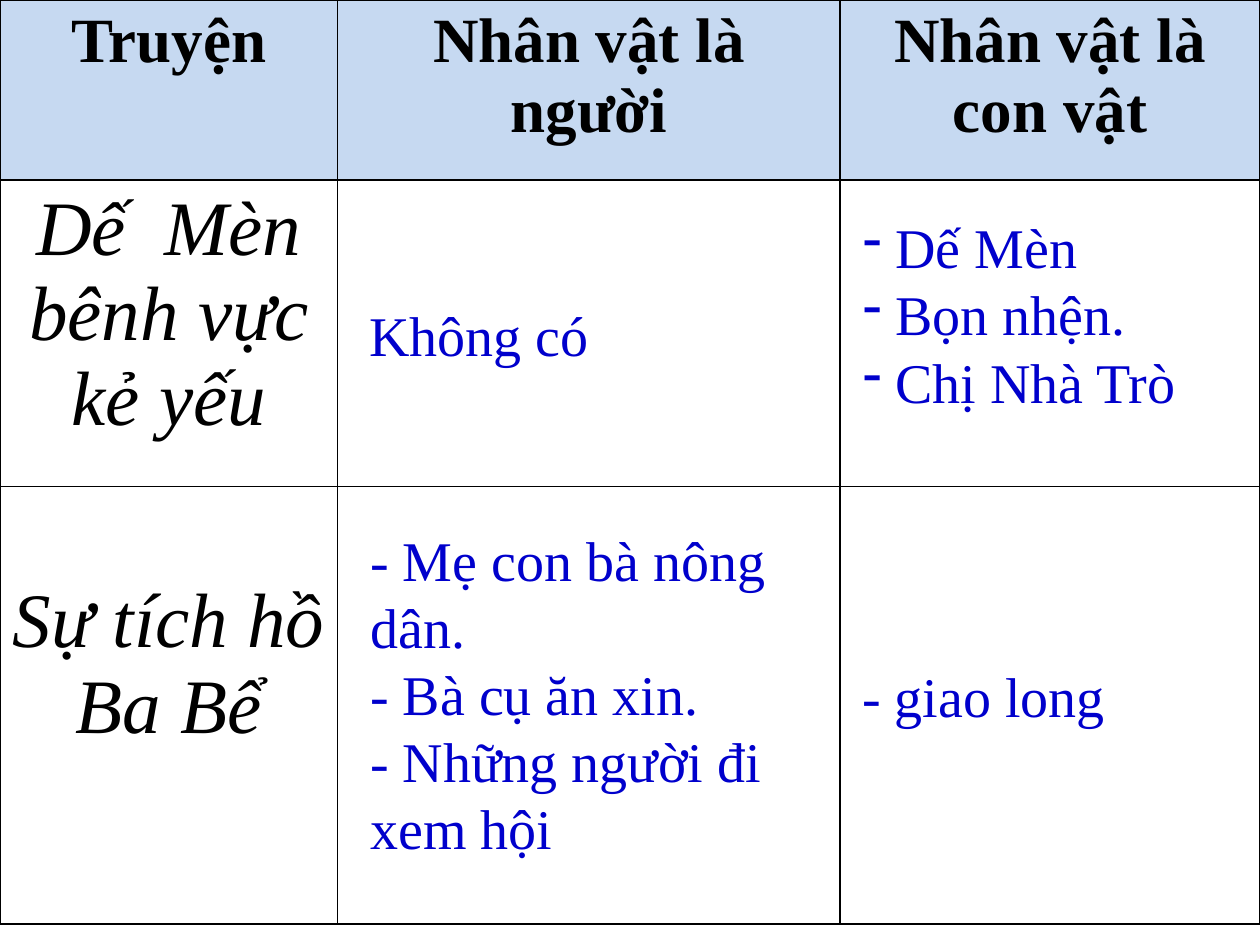
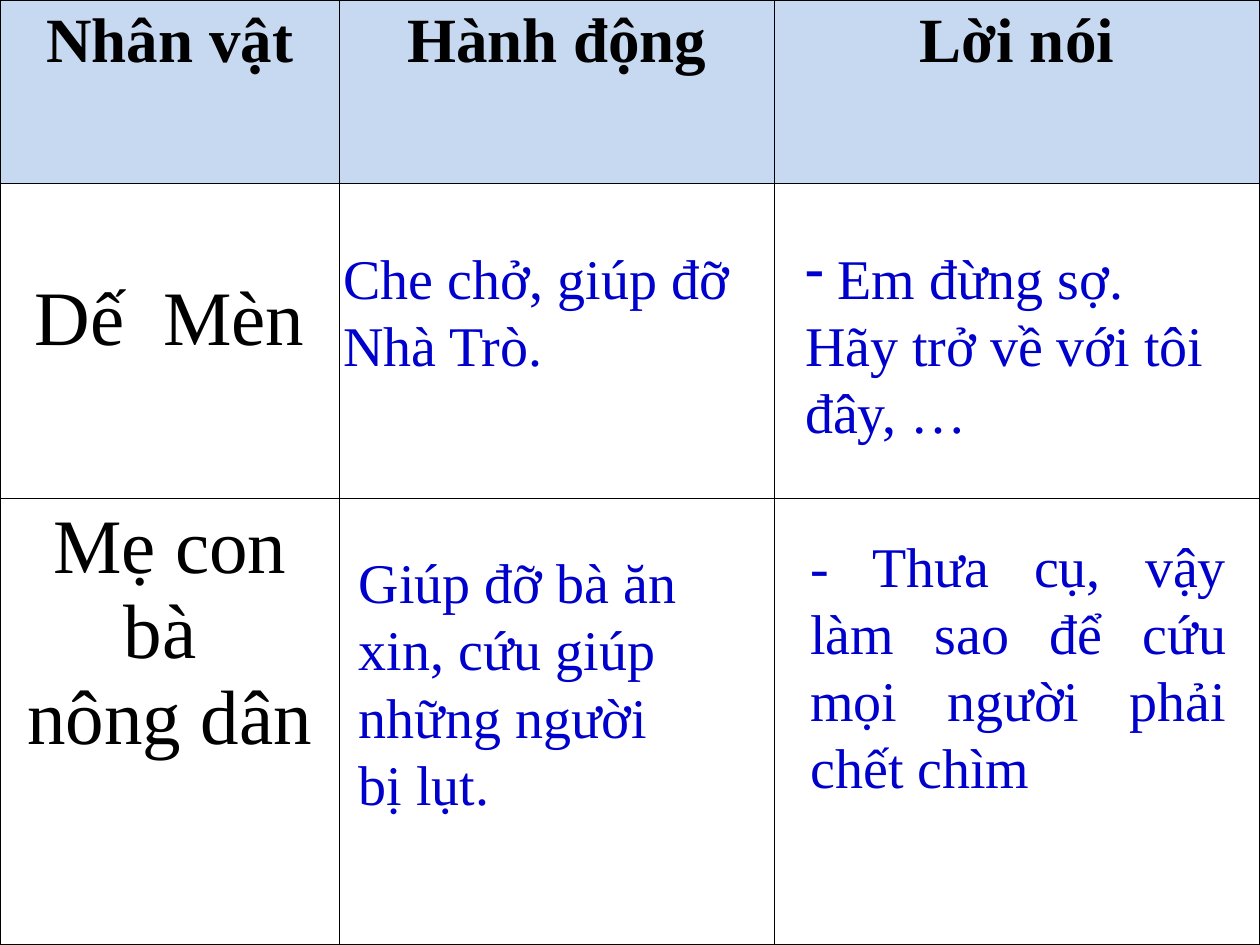
import pptx
import pptx.dml.color
import pptx.enum.text
import pptx.oxml
import pptx.oxml.ns
import pptx.util

Pt = pptx.util.Pt
RGBColor = pptx.dml.color.RGBColor
Align = pptx.enum.text.PP_ALIGN

BLACK = RGBColor(0x00, 0x00, 0x00)
WHITE = RGBColor(0xFF, 0xFF, 0xFF)
HEADER_BLUE = RGBColor(0xC6, 0xD9, 0xF1)
ANSWER_BLUE = RGBColor(0x00, 0x00, 0xCC)
FONT = "Times New Roman"
HEADER_SIZE, NAME_SIZE, ANSWER_SIZE = 36, 44, 32
CELL_TOP = 3.6
LOWERED_TOP = 53
BLANK_LAYOUT = 6


def write_text(frame, lines, size, color, align=None, bold=False, italic=False, dashes=False):
    """Fill a text frame with one paragraph per line."""
    for index, line in enumerate(lines):
        para = frame.paragraphs[0] if index == 0 else frame.add_paragraph()
        para.alignment = align
        if dashes:
            add_dash_bullet(para)
        span = para.add_run()
        span.text = line
        font = span.font
        font.name, font.size, font.color.rgb = FONT, Pt(size), color
        font.bold, font.italic = bold, italic


def add_dash_bullet(para):
    properties = para._p.get_or_add_pPr()
    properties.set("marL", "0")
    properties.set("indent", "0")
    pptx.oxml.ns.qn("a:buChar")
    for markup in ("<a:buFontTx {}/>", '<a:buChar {} char="-"/>'):
        properties.append(pptx.oxml.parse_xml(markup.format(pptx.oxml.ns.nsdecls("a"))))


def add_borders(cell, color=BLACK, width=1):
    properties = cell._tc.get_or_add_tcPr()
    for index, side in enumerate(("lnL", "lnR", "lnT", "lnB")):
        line = pptx.oxml.parse_xml(
            f'<a:{side} {pptx.oxml.ns.nsdecls("a")} w="{Pt(width)}">'
            f'<a:solidFill><a:srgbClr val="{color}"/></a:solidFill></a:{side}>')
        properties.insert(index, line)


class Lesson:
    """The deck, its shared style and the current page."""

    def __init__(self):
        self.deck = pptx.Presentation()
        self.deck.slide_width, self.deck.slide_height = Pt(720), Pt(540)
        self.page = None

    def add_page(self):
        self.page = self.deck.slides.add_slide(self.deck.slide_layouts[BLANK_LAYOUT])

    def add_grid(self, widths, heights, headers, names, italic=False):
        """Draw the table; names holds (lines, top margin) for the first column."""
        frame = self.page.shapes.add_table(
            len(heights), len(widths), 0, 0, Pt(sum(widths)), Pt(sum(heights)))
        table = frame.table
        table.first_row = table.horz_banding = False
        for column, width in zip(table.columns, widths):
            column.width = Pt(width)
        for row_index, (row, height) in enumerate(zip(table.rows, heights)):
            row.height = Pt(height)
            for cell in row.cells:
                cell.fill.solid()
                cell.fill.fore_color.rgb = WHITE if row_index else HEADER_BLUE
                add_borders(cell)
        for column_index, header in enumerate(headers):
            write_text(table.cell(0, column_index).text_frame, [header],
                       HEADER_SIZE, BLACK, Align.CENTER, bold=True)
        for row_index, (lines, top) in enumerate(names, start=1):
            cell = table.cell(row_index, 0)
            cell.margin_top = Pt(top)
            write_text(cell.text_frame, lines, NAME_SIZE, BLACK, Align.CENTER, italic=italic)

    def add_answer(self, left, top, width, height, lines, align=None, dashes=False):
        box = self.page.shapes.add_textbox(Pt(left), Pt(top), Pt(width), Pt(height))
        frame = box.text_frame
        frame.word_wrap = True
        frame.auto_size = pptx.enum.text.MSO_AUTO_SIZE.SHAPE_TO_FIT_TEXT
        write_text(frame, lines, ANSWER_SIZE, ANSWER_BLUE, align, dashes=dashes)


def add_story_page(lesson):
    lesson.add_page()
    lesson.add_grid(
        (193, 287, 240), (103, 175, 250),
        ("Truyện", "Nhân vật là người", "Nhân vật là con vật"),
        ((["Dế  Mèn bênh vực kẻ yếu"], CELL_TOP), (["Sự tích hồ Ba Bể"], LOWERED_TOP)),
        italic=True)
    lesson.add_answer(204, 168, 234, 46, ["Không có"])
    lesson.add_answer(486, 118, 234, 124, [" Dế Mèn", " Bọn nhện.", " Chị Nhà Trò"], dashes=True)
    lesson.add_answer(204.5, 296.5, 270, 201,
                      ["- Mẹ con bà nông dân.", "- Bà cụ ăn xin.", "- Những người đi xem hội"])
    lesson.add_answer(445, 374.5, 234, 46, ["- giao long"], Align.CENTER)


def add_character_page(lesson):
    lesson.add_page()
    lesson.add_grid(
        (194, 248.5, 277.5), (105, 180, 255),
        ("Nhân vật", "Hành động", "Lời nói"),
        ((["Dế  Mèn"], LOWERED_TOP), (["Mẹ con bà ", "nông dân"], CELL_TOP)))
    lesson.add_answer(189, 135.5, 252, 85, ["Che chở, giúp đỡ Nhà Trò."])
    lesson.add_answer(453, 135.5, 255, 124,
                      [" Em đừng sợ. Hãy trở về với tôi đây, …"], dashes=True)
    lesson.add_answer(198, 309.5, 210, 163,
                      ["Giúp đỡ bà ăn xin, cứu giúp những người bị lụt."])
    lesson.add_answer(456, 300, 252, 163,
                      ["- Thưa cụ, vậy làm sao để cứu mọi người phải chết chìm"], Align.JUSTIFY)


def main():
    lesson = Lesson()
    add_story_page(lesson)
    add_character_page(lesson)
    lesson.deck.save("out.pptx")


if __name__ == "__main__":
    main()
